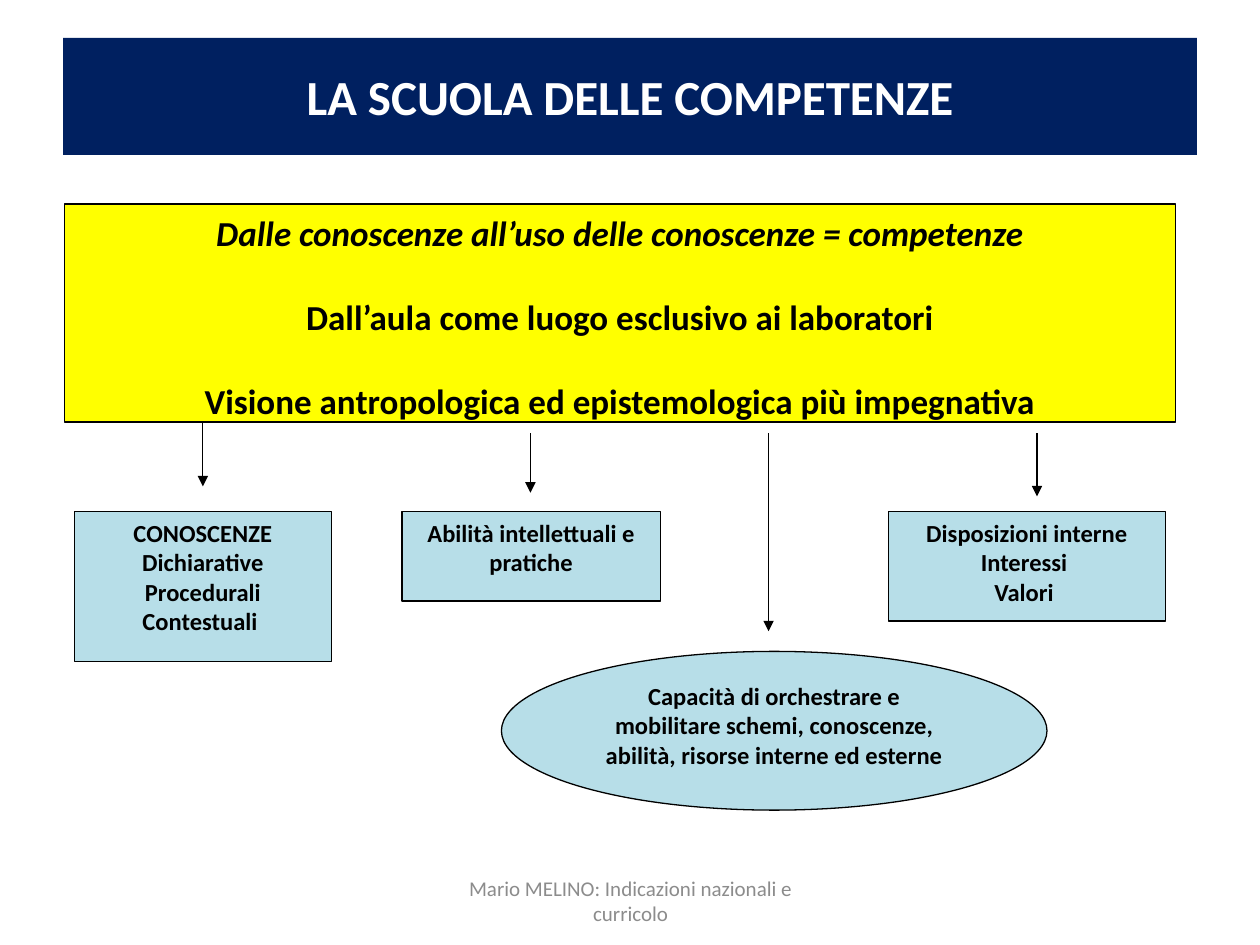
"""Build the slide on the school of competences."""
import pptx
import pptx.util
import pptx.dml.color
import pptx.enum.shapes
import pptx.enum.text
import pptx.oxml
import pptx.oxml.ns

Inches = pptx.util.Inches
Pt = pptx.util.Pt
Kind = pptx.enum.shapes.MSO_SHAPE
Anchor = pptx.enum.text.MSO_ANCHOR
COLORS = {"navy": "002060", "yellow": "FFFF00", "blue": "B7DEE8",
          "black": "000000", "white": "FFFFFF", "gray": "8C8C8C"}


def tint(name):
    return pptx.dml.color.RGBColor.from_string(COLORS[name])


def write(shape, lines, size=14, color="black", bold=True, slant=(),
          gap=0, anchor=Anchor.TOP, base=0.05):
    frame = shape.text_frame
    frame.word_wrap = True
    frame.vertical_anchor = anchor
    frame.margin_left = frame.margin_right = Inches(0.1)
    frame.margin_top, frame.margin_bottom = Inches(0.05), Inches(base)
    for i, line in enumerate(lines):
        para = frame.paragraphs[0] if i == 0 else frame.add_paragraph()
        para.alignment = pptx.enum.text.PP_ALIGN.CENTER
        para.space_before = Pt(gap if i else 0)
        run = para.add_run()
        run.text = line
        font = run.font
        font.name, font.size, font.bold = "Calibri", Pt(size), bold
        font.italic = i in slant
        font.color.rgb = tint(color)


deck = pptx.Presentation()
deck.slide_width, deck.slide_height = Inches(10), Inches(7.5)
slide = deck.slides.add_slide(deck.slide_layouts[5])
shapes = slide.shapes

title = shapes.title
title.left, title.top = Inches(0.5), Inches(0.3)
title.width, title.height = Inches(9), Inches(0.93)
title.fill.solid()
title.fill.fore_color.rgb = tint("navy")
write(title, ["LA SCUOLA DELLE COMPETENZE"], size=28, color="white",
      anchor=Anchor.MIDDLE)

vision = ["Dalle conoscenze all’uso delle conoscenze = competenze",
          "Dall’aula come luogo esclusivo ai laboratori",
          "Visione antropologica ed epistemologica più impegnativa"]
boxes = [
    (Kind.RECTANGLE, (0.51, 1.62, 8.82, 1.73), "yellow", vision,
     dict(size=20, slant=(0,), gap=24, anchor=Anchor.MIDDLE, base=0)),
    (Kind.RECTANGLE, (0.59, 4.06, 2.04, 1.19), "blue",
     ["CONOSCENZE", "Dichiarative", "Procedurali", "Contestuali "], {}),
    (Kind.RECTANGLE, (3.19, 4.06, 2.05, 0.71), "blue",
     ["Abilità intellettuali e pratiche"], {}),
    (Kind.RECTANGLE, (7.05, 4.06, 2.2, 0.87), "blue",
     ["Disposizioni interne", "Interessi ", "Valori "], {}),
    (Kind.OVAL, (3.98, 5.17, 4.33, 1.26), "blue",
     ["Capacità di orchestrare e mobilitare schemi, conoscenze, "
      "abilità, risorse interne ed esterne"], {}),
]
for kind, place, fill, lines, style in boxes:
    box = shapes.add_shape(kind, *map(Inches, place))
    box.shadow.inherit = False
    box.fill.solid()
    box.fill.fore_color.rgb = tint(fill)
    box.line.color.rgb = tint("black")
    box.line.width = Pt(0.75)
    write(box, lines, **style)

for x, top, end in [(1.61, 3.36, 3.86), (4.21, 3.44, 3.91),
                    (8.23, 3.44, 3.94), (6.1, 3.44, 5.01)]:
    arrow = shapes.add_connector(pptx.enum.shapes.MSO_CONNECTOR.STRAIGHT,
                                 Inches(x), Inches(top), Inches(x), Inches(end))
    arrow.line.color.rgb = tint("black")
    arrow.line.width = Pt(0.75)
    space = pptx.oxml.ns.nsdecls("a")
    head = pptx.oxml.parse_xml(f'<a:tailEnd {space} type="triangle"/>')
    arrow.line._get_or_add_ln().append(head)
    plain = pptx.oxml.parse_xml(f"<a:effectLst {space}/>")
    arrow._element.spPr.append(plain)

footer = shapes.add_textbox(*map(Inches, (3.42, 6.95, 3.17, 0.4)))
write(footer, ["Mario MELINO: Indicazioni nazionali e curricolo"],
      size=12, color="gray", bold=False, anchor=Anchor.MIDDLE)

deck.save("out.pptx")
